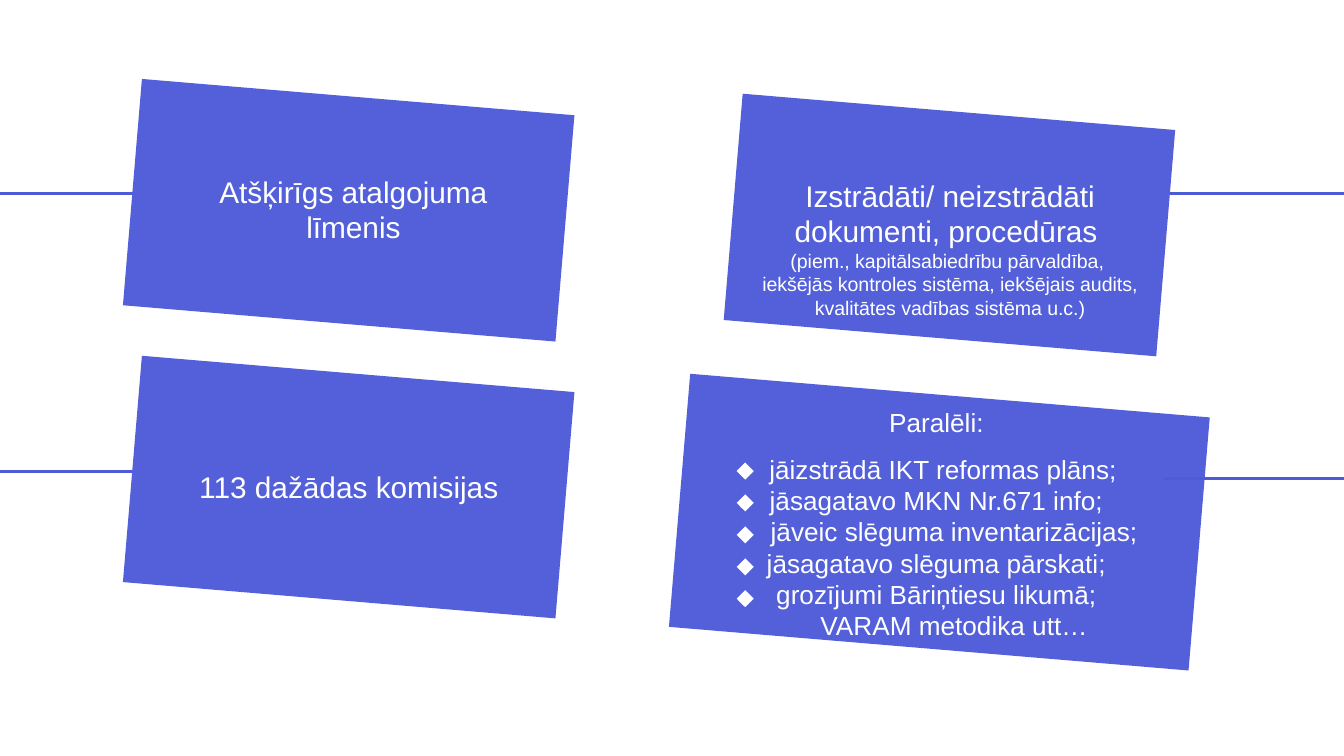
from pptx import Presentation
from pptx.dml.color import RGBColor as Color
from pptx.enum.shapes import MSO_CONNECTOR as Connector, MSO_SHAPE as Shape
from pptx.enum.text import MSO_ANCHOR as Anchor, MSO_AUTO_SIZE as AutoSize, PP_ALIGN as Align
from pptx.oxml.ns import qn
from pptx.util import Inches, Pt
from lxml.etree import SubElement

CARD = "5360D9"
LINE = "4E5BD7"
WHITE = "FFFFFF"
SPACED = {"line_spacing": 1.07, "space_after": Pt(8)}


def paint(target, value):
    target.rgb = Color.from_string(value)


def apply(target, formats):
    for name, value in formats.items():
        setattr(target, name, value)


def add_rectangle(page, place, rotation, fill):
    shape = page.shapes.add_shape(Shape.RECTANGLE, *map(Inches, place))
    shape.rotation = rotation
    shape.shadow.inherit = False
    shape.fill.solid()
    paint(shape.fill.fore_color, fill)
    shape.line.fill.background()


def add_line(page, left, top):
    line = page.shapes.add_connector(
        Connector.STRAIGHT, Inches(left), Inches(top), Inches(left + 1.68), Inches(top))
    paint(line.line.color, LINE)
    line.line.width = Pt(1.5)
    SubElement(line._element.spPr, qn("a:effectLst"))


def write_paragraphs(box, paragraphs):
    frame = box.text_frame
    apply(frame, {"word_wrap": True, "auto_size": AutoSize.NONE,
                  "vertical_anchor": Anchor.TOP})
    for index, (text, size, indent, formats) in enumerate(paragraphs):
        para = frame.paragraphs[0] if index == 0 else frame.add_paragraph()
        properties = para._p.get_or_add_pPr()
        properties.set("marL", str(Inches(indent)))
        properties.set("indent", "0")
        SubElement(properties, qn("a:buNone"))
        apply(para, {"alignment": Align.CENTER, "space_before": Pt(0), **formats})
        span = para.add_run()
        span.text = text
        apply(span.font, {"name": "Arial", "size": Pt(size)})
        paint(span.font.color, WHITE)


def add_text(page, place, paragraphs):
    write_paragraphs(page.shapes.add_textbox(*map(Inches, place)), paragraphs)


def fill_list(page, box, place, paragraphs):
    names = ("left", "top", "width", "height")
    apply(box, dict(zip(names, map(Inches, place))))
    write_paragraphs(box, paragraphs)
    page.shapes._spTree.append(box._element)


def main():
    deck = Presentation()
    width = Inches(10)
    apply(deck, {"slide_width": width, "slide_height": width * 9 // 16})
    page = deck.slides.add_slide(deck.slide_layouts[1])
    title, body = page.placeholders
    title._element.getparent().remove(title._element)

    add_rectangle(page, (5.05, 2.94, 3.88, 1.89), 4.8, CARD)
    for left, top in ((8.66, 1.44), (8.66, 3.56), (-0.3, 3.51), (-0.3, 1.44)):
        add_line(page, left, top)
    for left, top in ((0.98, 2.78), (5.45, 0.83), (0.98, 0.72)):
        add_rectangle(page, (left, top, 3.23, 1.69), 4.8, CARD)

    add_text(page, (1.5, 1.24, 2.26, 0.64),
             [("Atšķirīgs atalgojuma līmenis", 16, 0, {})])
    add_text(page, (5.48, 1.27, 3.18, 1.17), [
        ("Izstrādāti/ neizstrādāti dokumenti, procedūras ", 16, 0, {}),
        ("(piem., kapitālsabiedrību pārvaldība, ", 10.5, 0, {}),
        ("iekšējās kontroles sistēma, iekšējais audits, "
         "kvalitātes vadības sistēma u.c.)", 10.5, 0, {}),
    ])
    add_text(page, (1.07, 3.42, 3.05, 0.37),
             [("113 dažādas komisijas", 16, 0, SPACED)])

    tasks = [
        ("jāizstrādā IKT reformas plāns; ", 0.1),
        ("jāsagatavo MKN Nr.671 info; ", 0),
        ("jāveic slēguma inventarizācijas;", 0.21),
        ("jāsagatavo slēguma pārskati; ", 0),
        ("grozījumi Bāriņtiesu likumā; ", 0),
        ("VARAM metodika utt…", 0.21),
    ]
    fill_list(page, body, (5.06, 2.96, 3.87, 1.88),
              [("Paralēli: ", 14, 0, SPACED)]
              + [(text, 14, indent, {}) for text, indent in tasks])
    for row in range(5):
        add_rectangle(page, (5.5, 3.46 + 0.95 * row / 4, 0.09, 0.09), 45, WHITE)

    deck.save("out.pptx")


if __name__ == "__main__":
    main()
